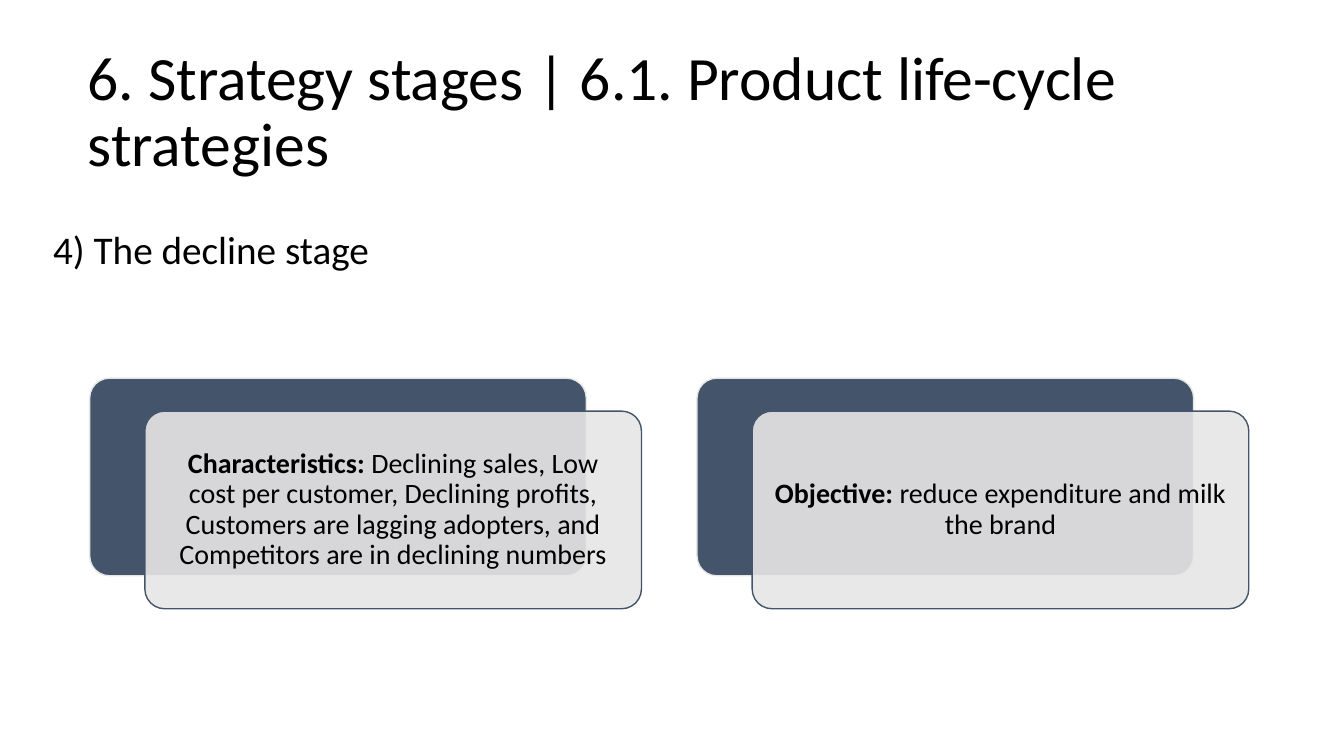
import pptx
import pptx.dml.color
import pptx.enum.shapes
import pptx.enum.text
import pptx.oxml.ns
import pptx.util
from lxml import etree

Cm = pptx.util.Cm
Pt = pptx.util.Pt
RGBColor = pptx.dml.color.RGBColor
Anchor = pptx.enum.text.MSO_ANCHOR

BLACK = RGBColor(0x00, 0x00, 0x00)
SLATE = RGBColor(0x44, 0x54, 0x6A)
LIGHT_GREY = RGBColor(0xE7, 0xE6, 0xE6)

CARDS = [
    ("Characteristics:",
     " Declining sales, Low cost per customer, Declining profits, "
     "Customers are lagging adopters, and Competitors are in declining numbers"),
    ("Objective:", " reduce expenditure and milk the brand"),
]


def style_run(run, size, bold=False):
    """Give a run the deck's typeface and colour."""
    run.font.name = "Calibri"
    run.font.size = Pt(size)
    run.font.bold = bold
    run.font.color.rgb = BLACK


def add_text(page, left, top, width, height, text, size, anchor):
    """Add a wrapped text box holding one paragraph."""
    frame = page.shapes.add_textbox(left, top, width, height).text_frame
    frame.word_wrap = True
    frame.vertical_anchor = anchor
    para = frame.paragraphs[0]
    para.text = text
    para.line_spacing = 0.9
    style_run(para.runs[0], size)


def add_panel(page, left, top, width, height, fill, line):
    """Add a rounded rectangle with a thin outline."""
    panel = page.shapes.add_shape(
        pptx.enum.shapes.MSO_SHAPE.ROUNDED_RECTANGLE, left, top, width, height)
    panel.adjustments[0] = 0.1
    panel.shadow.inherit = False
    panel.fill.solid()
    panel.fill.fore_color.rgb = fill
    panel.line.color.rgb = line
    panel.line.width = Pt(1)
    return panel


def add_card(page, left, top, width, height, label, detail):
    """Add a dark panel with a translucent captioned panel stepped over it."""
    step_x, step_y = Cm(1.39), Cm(0.83)
    size = (width - step_x, height - step_y)
    add_panel(page, left, top, *size, SLATE, LIGHT_GREY)
    front = add_panel(page, left + step_x, top + step_y, *size, LIGHT_GREY, SLATE)
    colour = front.fill._xPr.find(".//" + pptx.oxml.ns.qn("a:srgbClr"))
    etree.SubElement(colour, pptx.oxml.ns.qn("a:alpha"), val="90000")

    frame = front.text_frame
    frame.word_wrap = True
    frame.vertical_anchor = Anchor.MIDDLE
    frame.margin_left = frame.margin_right = Cm(0.4)
    para = frame.paragraphs[0]
    para.alignment = pptx.enum.text.PP_ALIGN.CENTER
    para.line_spacing = 0.9
    for text, bold in ((label, True), (detail, False)):
        span = para.add_run()
        span.text = text
        style_run(span, 20, bold)


def add_card_row(page, left, top, width, height, gap):
    """Spread the cards evenly across the given box."""
    card_width = (width - gap * (len(CARDS) - 1)) // len(CARDS)
    for index, (label, detail) in enumerate(CARDS):
        add_card(page, left + index * (card_width + gap), top,
                 card_width, height, label, detail)


def main():
    """Build and save the decline stage slide."""
    deck = pptx.Presentation()
    deck.slide_width, deck.slide_height = Cm(33.87), Cm(19.05)
    page = deck.slides.add_slide(deck.slide_layouts[6])
    add_text(page, Cm(1.96), Cm(1.02), Cm(29.77), Cm(3.68),
             "6. Strategy stages | 6.1. Product life-cycle strategies",
             44, Anchor.MIDDLE)
    add_text(page, Cm(1.09), Cm(5.69), Cm(31.67), Cm(12.34),
             "4) The decline stage", 28, Anchor.TOP)
    add_card_row(page, Cm(2.26), Cm(9.53), Cm(29.21), Cm(5.81), Cm(1.4))
    deck.save("out.pptx")


if __name__ == "__main__":
    main()
